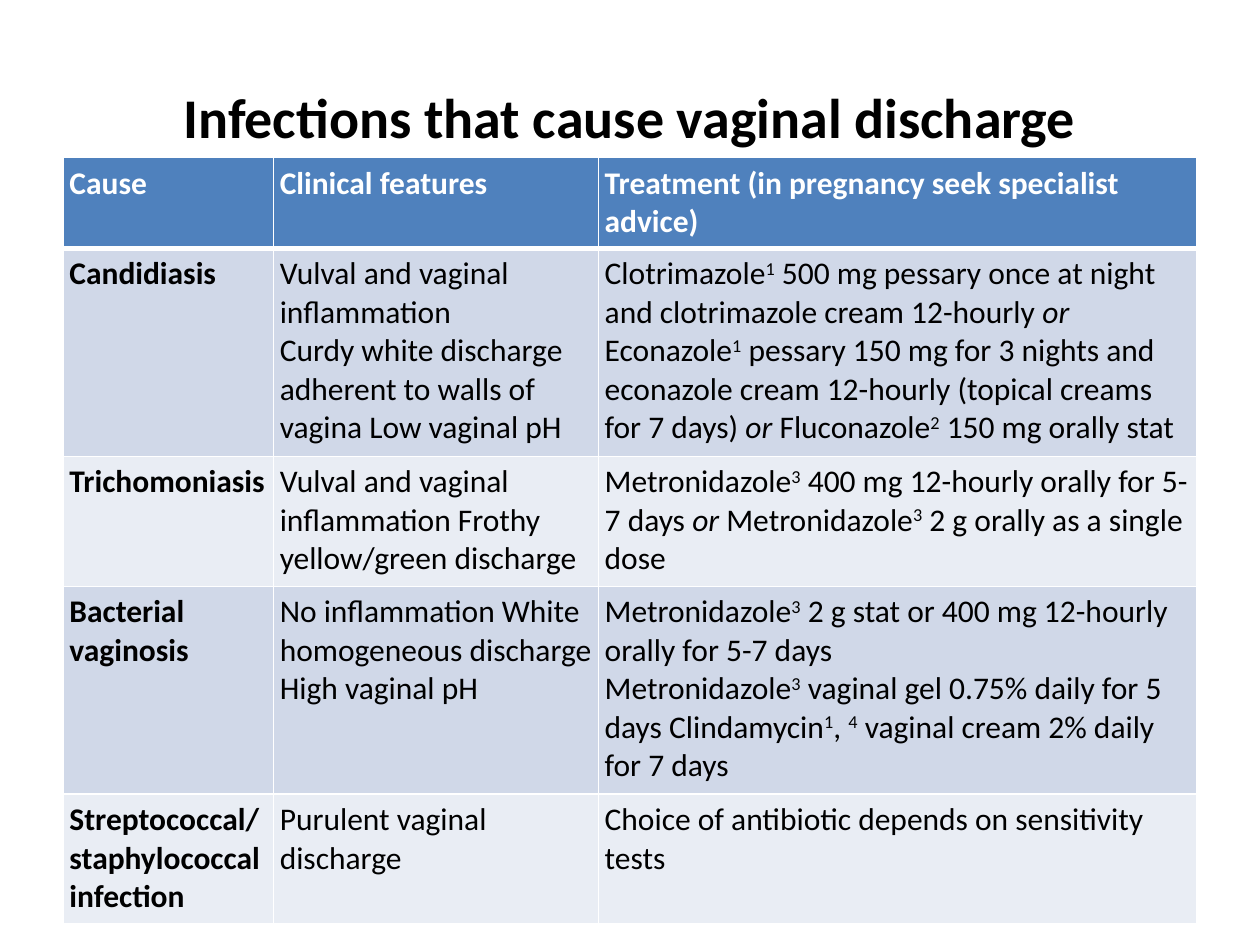
import pptx
import pptx.dml.color
import pptx.enum.text
import pptx.oxml
import pptx.oxml.ns
import pptx.util
from dataclasses import dataclass

Cm, Pt = pptx.util.Cm, pptx.util.Pt
RGB = pptx.dml.color.RGBColor.from_string


@dataclass(frozen=True)
class Theme:
    font: str = "Calibri"
    title_size: int = 32
    table_size: int = 18
    text: str = "000000"
    header_text: str = "FFFFFF"
    header_fill: str = "4F81BD"
    bands: tuple = ("D0D8E8", "E9EDF4")
    rule: str = "FFFFFF"
    thin: int = 1
    thick: int = 3


THEME = Theme()
COLUMNS = (4.24, 6.55, 12.07)
ROWS = (1.83, 4.19, 2.62, 4.19, 2.62)

# Within a cell, "|" separates runs; "^" marks superscript and "*" italic
CELLS = (
    ("Cause", "Clinical features", "Treatment (in pregnancy seek specialist advice)"),
    ("Candidiasis",
     "Vulval and vaginal inflammation\n"
     "Curdy white discharge adherent to walls of vagina Low vaginal pH",
     "Clotrimazole|^1| 500 mg pessary once at night and clotrimazole cream 12-hourly |*or"
     "| Econazole|^1| pessary 150 mg for 3 nights and econazole cream 12-hourly "
     "(topical creams for 7 days) |*or| Fluconazole|^2| 150 mg orally stat"),
    ("Trichomoniasis",
     "Vulval and vaginal inflammation Frothy yellow/green discharge",
     "Metronidazole|^3| 400 mg 12-hourly orally for 5-7 days |*or"
     "| Metronidazole|^3| 2 g orally as a single dose"),
    ("Bacterial vaginosis",
     "No inflammation White homogeneous discharge\nHigh vaginal pH",
     "Metronidazole|^3| 2 g stat or 400 mg 12-hourly orally for 5-7 days\n"
     "Metronidazole|^3| vaginal gel 0.75% daily for 5 days Clindamycin|^1|, |^4"
     "| vaginal cream 2% daily for 7 days"),
    ("Streptococcal/staphylococcal infection",
     "Purulent vaginal discharge",
     "Choice of antibiotic depends on sensitivity tests"),
)


def set_attrs(obj, values):
    for name, value in values.items():
        setattr(obj, name, value)


def format_font(font, size, color, bold, italic=False):
    set_attrs(font, {"name": THEME.font, "size": Pt(size), "bold": bold, "italic": italic})
    font.color.rgb = RGB(color)


def write_runs(p, text, color, bold):
    for part in text.split("|"):
        mark = part[0] if part[0] in "^*" else ""
        for i, line in enumerate(part[len(mark):].split("\n")):
            if i:
                p.add_line_break()
            r = p.add_run()
            r.text = line
            format_font(r.font, THEME.table_size, color, bold, mark == "*")
            if mark == "^":
                r._r.get_or_add_rPr().set("baseline", "30000")


def set_borders(cell, widths):
    tc_pr = cell._tc.get_or_add_tcPr()
    for side, width in widths.items():
        tc_pr.append(pptx.oxml.parse_xml(
            f'<a:ln{side} {pptx.oxml.ns.nsdecls("a")} w="{Pt(width)}">'
            f'<a:solidFill><a:srgbClr val="{THEME.rule}"/></a:solidFill></a:ln{side}>'))


def add_title(s, box, text):
    sp = s.shapes.title
    set_attrs(sp, dict(zip(("left", "top", "width", "height"), map(Cm, box))))
    tf = sp.text_frame
    tf.text = text
    tf.vertical_anchor = pptx.enum.text.MSO_ANCHOR.MIDDLE
    p = tf.paragraphs[0]
    p.alignment = pptx.enum.text.PP_ALIGN.CENTER
    format_font(p.runs[0].font, THEME.title_size, THEME.text, True)


def add_infection_table(s, box):
    table = s.shapes.add_table(len(ROWS), len(COLUMNS), *map(Cm, box)).table
    for column, width in zip(table.columns, COLUMNS):
        column.width = Cm(width)
    for row, height in zip(table.rows, ROWS):
        row.height = Cm(height)

    margins = {f"margin_{side}": Cm(0.13) for side in ("left", "right", "top", "bottom")}
    for i, texts in enumerate(CELLS):
        header = i == 0
        fill = THEME.header_fill if header else THEME.bands[(i - 1) % 2]
        color = THEME.header_text if header else THEME.text
        # A thick rule separates the header from the body
        widths = {"L": THEME.thin, "R": THEME.thin,
                  "T": THEME.thick if i == 1 else THEME.thin,
                  "B": THEME.thick if header else THEME.thin}
        for j, text in enumerate(texts):
            cell = table.cell(i, j)
            set_attrs(cell, margins)
            set_borders(cell, widths)
            cell.fill.solid()
            cell.fill.fore_color.rgb = RGB(fill)
            write_runs(cell.text_frame.paragraphs[0], text, color, header or j == 0)


def main():
    prs = pptx.Presentation()
    set_attrs(prs, {"slide_width": Cm(25.4), "slide_height": Cm(19.05)})
    s = prs.slides.add_slide(prs.slide_layouts[5])
    add_title(s, (1.27, 0.76, 22.86, 3.18), "Infections that cause vaginal discharge")
    add_infection_table(s, (1.27, 3.18, sum(COLUMNS), sum(ROWS)))
    prs.save("out.pptx")


if __name__ == "__main__":
    main()
